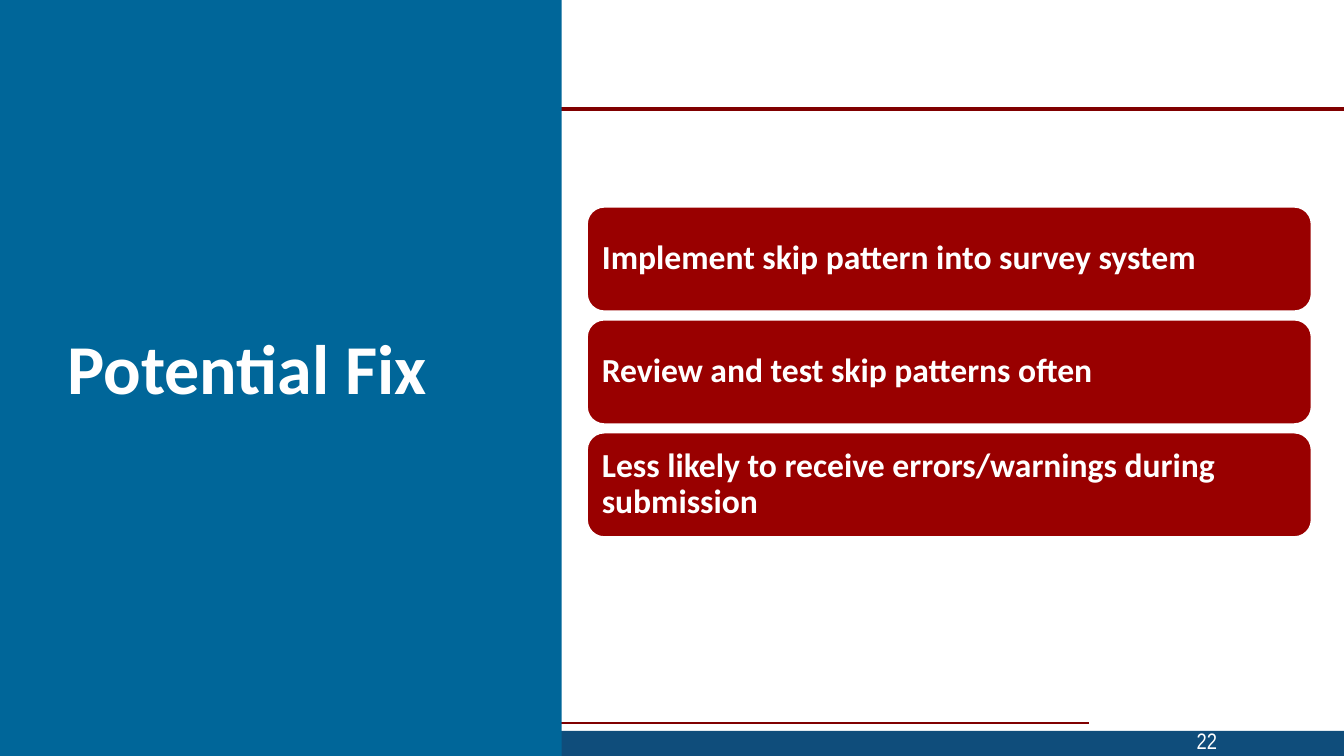
from dataclasses import dataclass

from lxml import etree
from pptx import Presentation
from pptx.dml.color import RGBColor
from pptx.enum.shapes import MSO_CONNECTOR, MSO_SHAPE
from pptx.enum.text import MSO_ANCHOR, PP_ALIGN
from pptx.oxml.ns import qn
from pptx.shapes.autoshape import Shape
from pptx.slide import Slide
from pptx.util import Inches, Pt

STRAIGHT = MSO_CONNECTOR.STRAIGHT
RECTANGLE = MSO_SHAPE.RECTANGLE
ROUNDED = MSO_SHAPE.ROUNDED_RECTANGLE
MIDDLE = MSO_ANCHOR.MIDDLE
LEFT, RIGHT = PP_ALIGN.LEFT, PP_ALIGN.RIGHT


@dataclass(frozen=True)
class Theme:
    white: RGBColor = RGBColor(0xFF, 0xFF, 0xFF)
    rule: RGBColor = RGBColor(0x80, 0x00, 0x00)
    panel: RGBColor = RGBColor(0x00, 0x66, 0x99)
    footer: RGBColor = RGBColor(0x0F, 0x4D, 0x7B)
    card: RGBColor = RGBColor(0x99, 0x00, 0x00)
    font: str = "Calibri"
    number_font: str = "Arial Narrow"
    title_size: float = 50
    card_size: float = 24
    number_size: float = 16


@dataclass(frozen=True)
class Box:
    left: float
    top: float
    width: float
    height: float

    def emu(self) -> tuple[int, int, int, int]:
        return (Inches(self.left), Inches(self.top),
                Inches(self.width), Inches(self.height))


@dataclass(frozen=True)
class Rule:
    start: float
    end: float
    y: float
    weight: float


THEME = Theme()
FOOTER_RULE = Rule(1.22, 10.8, 7.17, 1.5)
HEADER_RULE = Rule(0, 13.33, 1.08, 3)
FOOTER_BAND = Box(0, 7.25, 13.33, 0.25)
TITLE_PANEL = Box(0, 0, 5.57, 7.5)
TITLE = Box(0.57, 0.68, 4.16, 6.02)
PAGE_NUMBER = Box(9.17, 7.15, 3, 0.4)
FIRST_CARD = Box(5.82, 2.05, 7.19, 1.04)
CARD_STEP = 1.12
FIXES = (
    "Implement skip pattern into survey system",
    "Review and test skip patterns often",
    "Less likely to receive errors/warnings during submission",
)


def add_rule(slide: Slide, rule: Rule) -> None:
    line = slide.shapes.add_connector(
        STRAIGHT, Inches(rule.start), Inches(rule.y),
        Inches(rule.end), Inches(rule.y))
    line.line.color.rgb = THEME.rule
    line.line.width = Pt(rule.weight)
    etree.SubElement(line._element.spPr, qn("a:effectLst"))


def add_block(slide: Slide, box: Box, fill: RGBColor,
              outline: bool = False) -> Shape:
    block = slide.shapes.add_shape(ROUNDED if outline else RECTANGLE, *box.emu())
    block.shadow.inherit = False
    block.fill.solid()
    block.fill.fore_color.rgb = fill
    if outline:
        block.line.color.rgb = THEME.white
        block.line.width = Pt(1.5)
    else:
        block.line.fill.background()
    return block


def write(holder: Shape, text: str, size: float, font: str = THEME.font,
          bold: bool = True, align: PP_ALIGN = LEFT,
          spacing: float = 0.9) -> None:
    frame = holder.text_frame
    frame.text = text
    frame.word_wrap = True
    frame.vertical_anchor = MIDDLE
    paragraph = frame.paragraphs[0]
    paragraph.alignment = align
    paragraph.line_spacing = spacing
    run_font = paragraph.runs[0].font
    run_font.name = font
    run_font.size = Pt(size)
    run_font.bold = bold
    run_font.color.rgb = THEME.white


def add_card(slide: Slide, index: int, text: str) -> None:
    box = Box(FIRST_CARD.left, FIRST_CARD.top + index * CARD_STEP,
              FIRST_CARD.width, FIRST_CARD.height)
    card = add_block(slide, box, THEME.card, outline=True)
    write(card, text, THEME.card_size)
    frame = card.text_frame
    frame.margin_left = frame.margin_right = Inches(0.1)
    frame.margin_top = frame.margin_bottom = Inches(0.1)


def main() -> None:
    deck = Presentation()
    deck.slide_width, deck.slide_height = Inches(13.33), Inches(7.5)
    slide = deck.slides.add_slide(deck.slide_layouts[6])

    # Rules, footer band and title panel
    add_rule(slide, FOOTER_RULE)
    add_block(slide, FOOTER_BAND, THEME.footer)
    add_rule(slide, HEADER_RULE)
    add_block(slide, TITLE_PANEL, THEME.panel)

    # Title and page number
    title = slide.shapes.add_textbox(*TITLE.emu())
    write(title, "Potential Fix", THEME.title_size)
    page_number = slide.shapes.add_textbox(*PAGE_NUMBER.emu())
    write(page_number, "22", THEME.number_size, THEME.number_font,
          bold=False, align=RIGHT, spacing=1.0)

    # Cards with the fixes
    for index, fix in enumerate(FIXES):
        add_card(slide, index, fix)

    deck.save("out.pptx")


if __name__ == "__main__":
    main()
